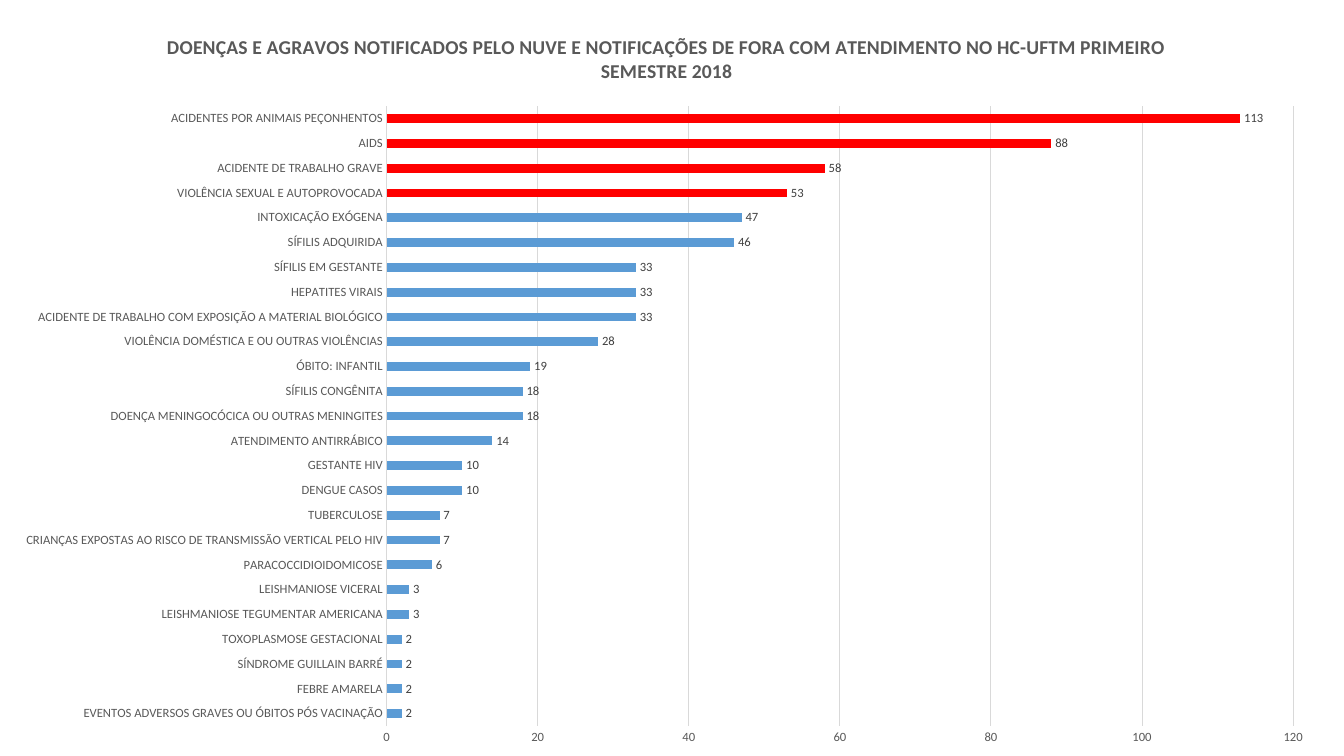
from lxml.etree import SubElement
from pptx import Presentation
from pptx.chart.data import CategoryChartData
from pptx.dml.color import RGBColor as RGB
from pptx.enum.chart import XL_CHART_TYPE as CT, XL_LABEL_POSITION as LP, XL_TICK_MARK as TM
from pptx.oxml.ns import qn
from pptx.util import Inches, Pt

TITLE = ("DOENÇAS E AGRAVOS NOTIFICADOS PELO NUVE E NOTIFICAÇÕES DE FORA "
         "COM ATENDIMENTO NO HC-UFTM PRIMEIRO SEMESTRE 2018")
CASES = [
    ("ACIDENTES POR ANIMAIS PEÇONHENTOS", 113),
    ("AIDS", 88),
    ("ACIDENTE DE TRABALHO GRAVE", 58),
    ("VIOLÊNCIA SEXUAL E AUTOPROVOCADA", 53),
    ("INTOXICAÇÃO EXÓGENA", 47),
    ("SÍFILIS ADQUIRIDA", 46),
    ("SÍFILIS EM GESTANTE", 33),
    ("HEPATITES VIRAIS", 33),
    ("ACIDENTE DE TRABALHO COM EXPOSIÇÃO A MATERIAL BIOLÓGICO", 33),
    ("VIOLÊNCIA DOMÉSTICA E OU OUTRAS VIOLÊNCIAS", 28),
    ("ÓBITO: INFANTIL", 19),
    ("SÍFILIS CONGÊNITA", 18),
    ("DOENÇA MENINGOCÓCICA OU OUTRAS MENINGITES", 18),
    ("ATENDIMENTO ANTIRRÁBICO", 14),
    ("GESTANTE HIV", 10),
    ("DENGUE CASOS", 10),
    ("TUBERCULOSE", 7),
    ("CRIANÇAS EXPOSTAS AO RISCO DE TRANSMISSÃO VERTICAL PELO HIV", 7),
    ("PARACOCCIDIOIDOMICOSE", 6),
    ("LEISHMANIOSE VICERAL", 3),
    ("LEISHMANIOSE TEGUMENTAR AMERICANA", 3),
    ("TOXOPLASMOSE GESTACIONAL", 2),
    ("SÍNDROME GUILLAIN BARRÉ", 2),
    ("FEBRE AMARELA", 2),
    ("EVENTOS ADVERSOS GRAVES OU ÓBITOS PÓS VACINAÇÃO", 2),
]
HIGHLIGHTED = 4
THEME = {
    "font": "Calibri",
    "bar": RGB(0x5B, 0x9B, 0xD5),
    "highlight": RGB(0xFF, 0, 0),
    "text": RGB(0x59, 0x59, 0x59),
    "label": RGB(0x40, 0x40, 0x40),
    "grid": RGB(0xD9, 0xD9, 0xD9),
    "title_size": Pt(14),
    "small_size": Pt(9),
    "line": Pt(0.75),
}
PLOT = {"x": 0.29, "y": 0.13, "w": 0.68, "h": 0.83}


def set_attrs(obj, **values):
    for name, value in values.items():
        setattr(obj, name, value)


def style_font(font, size, color, bold=False):
    set_attrs(font, name=THEME["font"], size=THEME[size], bold=bold)
    font.color.rgb = THEME[color]


def style_line(line):
    line.color.rgb = THEME["grid"]
    line.width = THEME["line"]


def fill(fmt, color):
    fmt.fill.solid()
    fmt.fill.fore_color.rgb = THEME[color]


def place_plot(chart):
    area = chart._chartSpace.find(".//" + qn("c:plotArea"))
    for old in area.findall(qn("c:layout")):
        area.remove(old)
    layout = SubElement(area, qn("c:layout"))
    area.insert(0, layout)
    manual = SubElement(layout, qn("c:manualLayout"))
    settings = {"layoutTarget": "inner", "xMode": "edge", "yMode": "edge", **PLOT}
    for tag, value in settings.items():
        SubElement(manual, qn("c:" + tag)).set("val", str(value))


def add_cases_chart(s, width, height):
    rows = CASES[::-1]
    data = CategoryChartData()
    data.categories = [name for name, _ in rows]
    data.add_series("Notificações", [count for _, count in rows])
    top = Inches(0.09)
    chart = s.shapes.add_chart(CT.BAR_CLUSTERED, 0, top, int(width * 0.992),
                               height - top, data).chart
    chart.has_legend = False
    tf = chart.chart_title.text_frame
    tf.text = TITLE
    style_font(tf.paragraphs[0].runs[0].font, "title_size", "text", True)
    chart.chart_title.include_in_layout = False

    cat, val = chart.category_axis, chart.value_axis
    for axis in (cat, val):
        set_attrs(axis, major_tick_mark=TM.NONE, minor_tick_mark=TM.NONE)
        style_font(axis.tick_labels.font, "small_size", "text")
    style_line(cat.format.line)
    val.format.line.fill.background()
    set_attrs(val, minimum_scale=0, maximum_scale=120, major_unit=20)
    style_line(val.major_gridlines.format.line)

    plot = chart.plots[0]
    set_attrs(plot, gap_width=182, vary_by_categories=False, has_data_labels=True)
    set_attrs(plot.data_labels, show_value=True, position=LP.OUTSIDE_END)
    style_font(plot.data_labels.font, "small_size", "label")
    series = plot.series[0]
    fill(series.format, "bar")
    for i in range(len(rows) - HIGHLIGHTED, len(rows)):
        fill(series.points[i].format, "highlight")
    place_plot(chart)


def main():
    prs = Presentation()
    set_attrs(prs, slide_width=Inches(13.33), slide_height=Inches(7.5))
    s = prs.slides.add_slide(prs.slide_layouts[6])
    add_cases_chart(s, prs.slide_width, prs.slide_height)
    prs.save("out.pptx")


if __name__ == "__main__":
    main()
